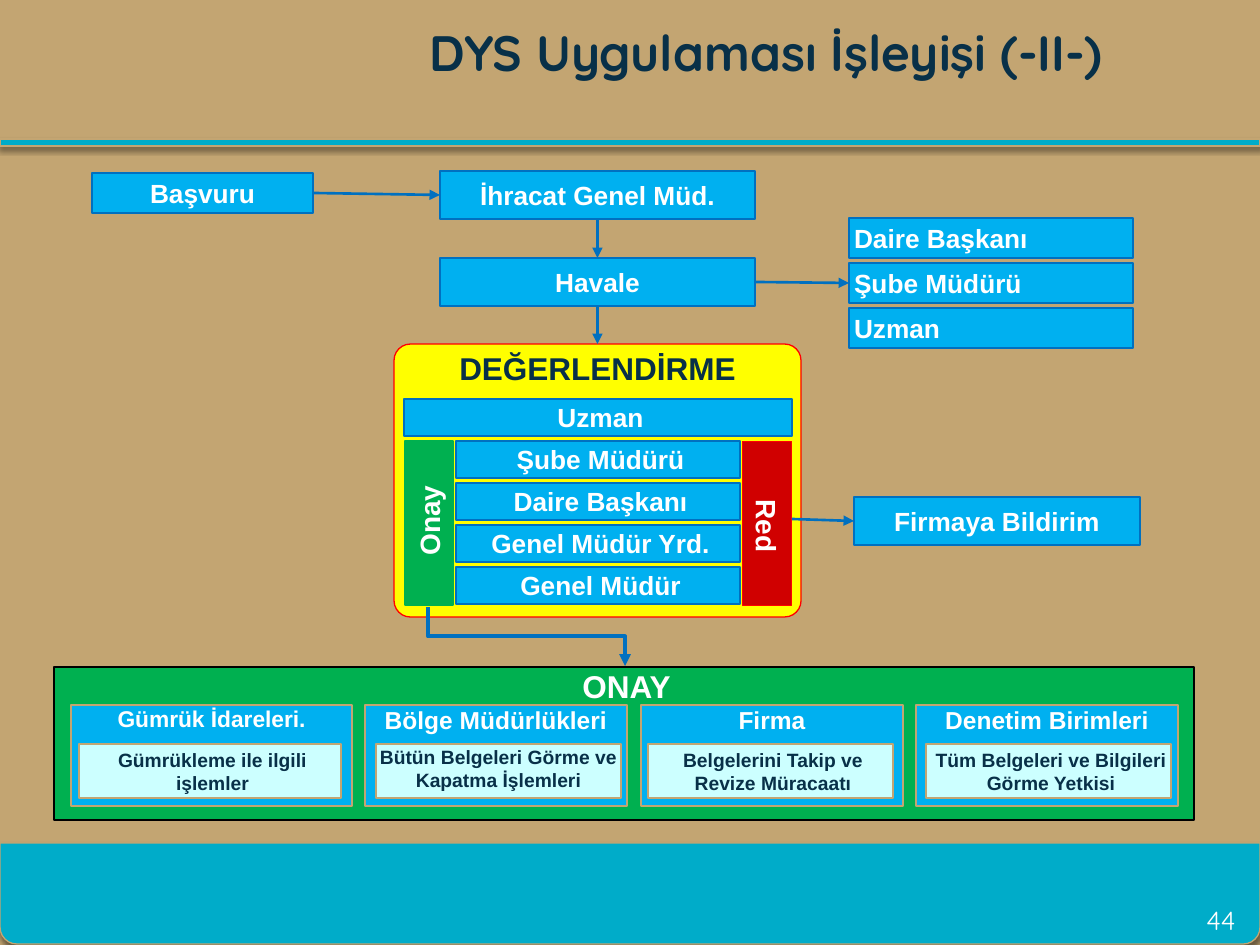
from dataclasses import dataclass
from pptx import Presentation
from pptx.dml.color import RGBColor
from pptx.enum.shapes import MSO_CONNECTOR as LINK, MSO_SHAPE as KIND
from pptx.enum.text import MSO_ANCHOR as ANCHOR, PP_ALIGN as ALIGN
from pptx.oxml import parse_xml
from pptx.oxml.ns import nsdecls, qn
from pptx.util import Emu, Pt


@dataclass(frozen=True)
class Theme:
    """Colours, fonts and type sizes."""
    sand: str = "C3A572"
    teal: str = "00ACC9"
    sky: str = "00B0F0"
    blue: str = "0070C0"
    navy: str = "083048"
    white: str = "FFFFFF"
    black: str = "000000"
    yellow: str = "FFFF00"
    red: str = "FF0000"
    dark: str = "D00000"
    green: str = "00B050"
    pale: str = "CCFFFF"
    body: str = "Arial"
    head: str = "Quicksand"
    title: float = 28.4
    large: int = 18
    side: int = 16
    label: int = 15
    card: int = 14
    small: int = 13
    note: int = 11


T = Theme()
TIGHT = (5, 0, 0, 0)
LOOSE = (13, 6, 13, 6)
CARD = (13, 0, 13, 6)


def px(n):
    """Turn pixels into EMU."""
    return Emu(round(n * 914400 / 126))


def rgb(code):
    """Turn a hex code into a colour."""
    return RGBColor.from_string(code)


def write(shape, text, size, color=T.white, font=T.body, bold=True,
          align=ALIGN.CENTER, anchor=ANCHOR.MIDDLE, inset=TIGHT, wrap=False):
    """Put formatted text into a shape."""
    frame = shape.text_frame
    frame.text = text
    frame.word_wrap = wrap
    frame.vertical_anchor = anchor
    (frame.margin_left, frame.margin_top,
     frame.margin_right, frame.margin_bottom) = map(px, inset)
    for para in frame.paragraphs:
        para.alignment = align
        for run in para.runs:
            run.font.name = font
            run.font.size = Pt(size)
            run.font.bold = bold
            run.font.color.rgb = rgb(color)


def box(slide, place, fill=T.sky, line=T.blue, width=1.5, kind=KIND.RECTANGLE, turn=0):
    """Draw a filled shape with an outline."""
    shape = slide.shapes.add_shape(kind, *map(px, place))
    shape.shadow.inherit = False
    shape.fill.solid()
    shape.fill.fore_color.rgb = rgb(fill)
    shape.line.color.rgb = rgb(line)
    shape.line.width = Pt(width)
    shape.rotation = turn
    return shape


def node(slide, place, text, **style):
    """Draw a blue step with its label."""
    shape = box(slide, place)
    write(shape, text, T.label, **style)
    return shape


def band(slide, place, **style):
    """Draw a teal band with a soft shadow."""
    shape = box(slide, place, T.teal, T.sand, 0.75, **style)
    props = shape._element.spPr
    props.remove(props.find(qn("a:effectLst")))
    props.append(parse_xml(
        f'<a:effectLst {nsdecls("a")}><a:outerShdw blurRad="{Pt(3)}" dist="{Pt(2)}" '
        f'dir="5400000" rotWithShape="0"><a:srgbClr val="{T.black}">'
        '<a:alpha val="45000"/></a:srgbClr></a:outerShdw></a:effectLst>'))


def arrow(slide, start, end, width=1.5, kind=LINK.STRAIGHT):
    """Draw a connector with an arrowhead at its end."""
    link = slide.shapes.add_connector(kind, *map(px, start + end))
    link.line.color.rgb = rgb(T.blue)
    link.line.width = Pt(width)
    link.line._get_or_add_ln().append(
        parse_xml(f'<a:tailEnd {nsdecls("a")} type="triangle"/>'))
    link._element.spPr.append(parse_xml(f'<a:effectLst {nsdecls("a")}/>'))
    return link


def join(slide, first, out, last, into):
    """Join the sides of two shapes with an arrow."""
    link = arrow(slide, (0, 0), (0, 0))
    link.begin_connect(first, out)
    link.end_connect(last, into)


def label(slide, place, text, size, color, bold):
    """Add a text box in the heading font."""
    area = slide.shapes.add_textbox(*map(px, place))
    write(area, text, size, color, T.head, bold, inset=LOOSE, wrap=True)


def frame(slide):
    """Draw the bands, title and slide number."""
    band(slide, (0, 843, 1260, 101), kind=KIND.ROUND_2_SAME_RECTANGLE, turn=180)
    band(slide, (0, 139, 1260, 7))
    label(slide, (273, 19, 987, 66), "DYS Uygulaması İşleyişi (-II-)", T.title, T.navy, True)
    label(slide, (1182, 903, 78, 35), "44", T.label, T.white, False)


def review(slide):
    """Draw the evaluation panel and return it."""
    panel = box(slide, (394, 344, 407, 273), T.yellow, T.red, 0.75, KIND.ROUNDED_RECTANGLE)
    panel.adjustments[0] = 0.06
    write(panel, "DEĞERLENDİRME", T.large, T.navy, anchor=ANCHOR.TOP, inset=(13, 0, 13, 0))
    deny = box(slide, (685, 499, 164, 49), T.dark, T.red, 0.75, turn=90)
    write(deny, "Red", T.side)
    grant = box(slide, (347, 499, 164, 48), T.green, T.green, turn=270)
    write(grant, "Onay", T.side)
    node(slide, (404, 399, 388, 37), "Uzman")
    steps = ("Şube Müdürü", "Daire Başkanı", "Genel Müdür Yrd.", "Genel Müdür")
    for i, text in enumerate(steps):
        node(slide, (456, 441 + 42 * i, 284, 37), text)
    return panel


def result(slide):
    """Draw the approval panel with its cards."""
    panel = box(slide, (54, 667, 1140, 153), T.green, T.black, 0.75)
    write(panel, "ONAY", T.large, anchor=ANCHOR.TOP)
    cards = (
        (71, 281, 79, 262, "Gümrük İdareleri.", T.small,
         "Gümrükleme ile ilgili işlemler", TIGHT, True),
        (365, 262, 376, 245, "Bölge Müdürlükleri", T.card,
         "Bütün Belgeleri Görme ve\nKapatma İşlemleri", CARD, False),
        (641, 262, 648, 245, "Firma", T.card,
         "Belgelerini Takip ve Revize Müracaatı", TIGHT, True),
        (916, 262, 926, 245, "Denetim Birimleri", T.card,
         "Tüm Belgeleri ve Bilgileri Görme Yetkisi", TIGHT, True),
    )
    for left, wide, inner, span, name, size, text, inset, wrap in cards:
        card = box(slide, (left, 705, wide, 101), line=T.sand, width=0.75)
        write(card, name, size, anchor=ANCHOR.TOP, inset=CARD)
        note = box(slide, (inner, 744, span, 54), T.pale, T.sand, 0.75)
        write(note, text, T.note, T.navy, inset=inset, wrap=wrap)


def flow(slide):
    """Draw the steps and the arrows between them."""
    apply = node(slide, (92, 173, 221, 40), "Başvuru", inset=(0, 0, 0, 0))
    office = node(slide, (440, 171, 315, 48), "İhracat Genel Müd.", inset=LOOSE)
    route = node(slide, (440, 258, 315, 48), "Havale", inset=LOOSE)
    roles = [node(slide, (849, 218 + 45 * i, 284, 40), text, align=ALIGN.LEFT)
             for i, text in enumerate(("Daire Başkanı", "Şube Müdürü", "Uzman"))]
    notice = node(slide, (854, 497, 286, 48), "Firmaya Bildirim", inset=LOOSE)
    panel = review(slide)
    result(slide)
    join(slide, apply, 3, office, 1)
    join(slide, office, 2, route, 0)
    join(slide, route, 2, panel, 0)
    join(slide, route, 3, roles[1], 1)
    arrow(slide, (792, 519), (854, 521)).end_connect(notice, 1)
    bend = arrow(slide, (556, 538), (497, 735), 2.25, LINK.ELBOW)
    bend._element.spPr.find(qn("a:xfrm")).set("rot", "16200000")


def main():
    """Build and save the slide."""
    deck = Presentation()
    deck.slide_width, deck.slide_height = px(1260), px(945)
    slide = deck.slides.add_slide(deck.slide_layouts[6])
    slide.background.fill.solid()
    slide.background.fill.fore_color.rgb = rgb(T.sand)
    frame(slide)
    flow(slide)
    deck.save("out.pptx")


if __name__ == "__main__":
    main()
